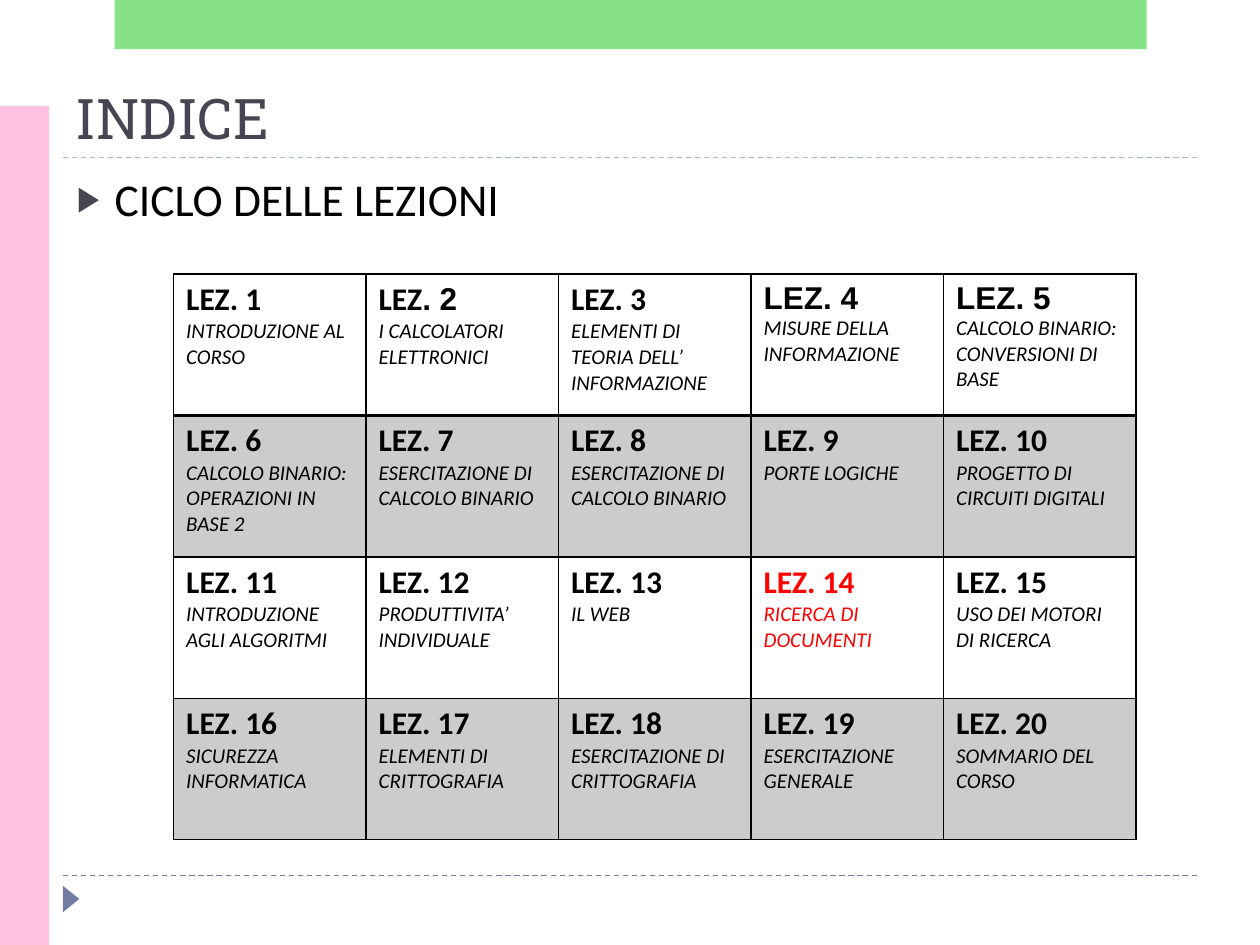
from dataclasses import dataclass
from itertools import product

from lxml.etree import SubElement
from pptx import Presentation
from pptx.dml.color import RGBColor
from pptx.enum.dml import MSO_LINE as Dash
from pptx.enum.shapes import MSO_CONNECTOR as Link, MSO_SHAPE as Shape
from pptx.enum.text import MSO_ANCHOR as Anchor, MSO_AUTO_SIZE as Fit, PP_ALIGN as Align
from pptx.oxml.ns import qn
from pptx.util import Pt

BLACK, RED, SLATE = "000000", "FF0000", "464653"
COLS, ROWS = 5, 4
HEAD = {"size": Pt(18), "bold": True, "italic": False, "name": "Calibri"}
TOPIC = {"size": Pt(12), "bold": False, "italic": True, "name": "Calibri"}


@dataclass
class Block:
    kind: Shape
    left: float
    top: float
    width: float
    height: float
    color: str
    alpha: int = 100
    turn: int = 0


@dataclass
class Rule:
    top: float
    color: str


@dataclass
class Lesson:
    topic: str
    arial: int = 0  # closing characters of the heading set in Arial
    color: str = BLACK


BLOCKS = [
    Block(Shape.ISOSCELES_TRIANGLE, 33.1, 509, 15.1, 9.4, "727CA3", turn=90),
    Block(Shape.RECTANGLE, 0, 60.5, 28.1, 479.5, "FFC1E0"),
    Block(Shape.RECTANGLE, 65.5, 0, 589.7, 28.1, "62D862", alpha=76),
]
RULES = [Rule(500.4, "727CA3"), Rule(90, "9FB8CD")]
LESSONS = [
    Lesson("INTRODUZIONE AL CORSO"),
    Lesson("I CALCOLATORI \vELETTRONICI", arial=3),
    Lesson("ELEMENTI DI TEORIA DELL’\vINFORMAZIONE"),
    Lesson("MISURE DELLA INFORMAZIONE", arial=6),
    Lesson("CALCOLO BINARIO: CONVERSIONI DI BASE", arial=6),
    Lesson("CALCOLO BINARIO: OPERAZIONI IN BASE 2"),
    Lesson("ESERCITAZIONE DI CALCOLO BINARIO"),
    Lesson("ESERCITAZIONE DI CALCOLO BINARIO"),
    Lesson("PORTE LOGICHE"),
    Lesson("PROGETTO DI CIRCUITI DIGITALI"),
    Lesson("INTRODUZIONE AGLI ALGORITMI"),
    Lesson("PRODUTTIVITA’ INDIVIDUALE"),
    Lesson("IL WEB"),
    Lesson("RICERCA DI DOCUMENTI", color=RED),
    Lesson("USO DEI MOTORI DI RICERCA"),
    Lesson("SICUREZZA INFORMATICA"),
    Lesson("ELEMENTI DI CRITTOGRAFIA"),
    Lesson("ESERCITAZIONE DI CRITTOGRAFIA"),
    Lesson("ESERCITAZIONE GENERALE"),
    Lesson("SOMMARIO DEL CORSO"),
]


def paint(target, color: str) -> None:
    target.rgb = RGBColor.from_string(color)


def fill(part, color: str, alpha: int = 100) -> None:
    part.fill.solid()
    paint(part.fill.fore_color, color)
    if alpha < 100:
        for tone in part._element.iter(qn("a:srgbClr")):
            SubElement(tone, qn("a:alpha"), val=str(alpha * 1000))


def style(run, form: dict, color: str) -> None:
    for key, value in form.items():
        setattr(run.font, key, value)
    paint(run.font.color, color)


def draw_block(slide, block: Block) -> None:
    box = (Pt(n) for n in (block.left, block.top, block.width, block.height))
    shape = slide.shapes.add_shape(block.kind, *box)
    shape.shadow.inherit = False
    shape.rotation = block.turn
    shape.line.fill.background()
    fill(shape, block.color, block.alpha)


def draw_rule(slide, rule: Rule) -> None:
    line = slide.shapes.add_connector(
        Link.STRAIGHT, Pt(36), Pt(rule.top), Pt(684), Pt(rule.top))
    line.line.width = Pt(0.75)
    line.line.dash_style = Dash.DASH
    paint(line.line.color, rule.color)
    SubElement(line._element.spPr, qn("a:effectLst"))


def set_text(holder, box: tuple, text: str, anchor: Anchor, form: dict, color: str):
    for key, value in zip(("left", "top", "width", "height"), box):
        setattr(holder, key, Pt(value))
    frame = holder.text_frame
    frame.auto_size = Fit.NONE
    frame.vertical_anchor = anchor
    para = frame.paragraphs[0]
    para.text = text
    para.alignment = Align.LEFT
    para.space_before = Pt(0)
    style(para.runs[0], form, color)
    return para


def add_bullet(para) -> None:
    props = para._p.get_or_add_pPr()
    props.set("marL", str(Pt(21.6)))
    props.set("indent", str(-Pt(21.6)))
    tone = SubElement(props, qn("a:buClr"))
    SubElement(tone, qn("a:srgbClr"), val=SLATE)
    SubElement(props, qn("a:buSzPct"), val="76000")
    SubElement(props, qn("a:buChar"), char="▶")


def add_edges(cell, row: int) -> None:
    props = cell._tc.get_or_add_tcPr()
    for side in "LRTB":
        thick = (row, side) in ((0, "B"), (1, "T"))
        edge = SubElement(props, qn(f"a:ln{side}"), w=str(Pt(2 if thick else 1)))
        ink = SubElement(edge, qn("a:solidFill"))
        SubElement(ink, qn("a:srgbClr"), val=BLACK)


def fill_cell(cell, row: int, num: int, lesson: Lesson) -> None:
    add_edges(cell, row)
    if row % 2:
        cell.fill.solid()
        paint(cell.fill.fore_color, BLACK)
        tone = cell._tc.tcPr.find(qn("a:solidFill"))[0]
        SubElement(tone, qn("a:alpha"), val="20000")
    else:
        cell.fill.background()
    # Heading, its tail sometimes in Arial
    para = cell.text_frame.paragraphs[0]
    head = f"LEZ. {num}"
    cut = len(head) - lesson.arial
    for text, face in ((head[:cut], "Calibri"), (head[cut:], "Arial")):
        if text:
            run = para.add_run()
            run.text = text
            style(run, HEAD | {"name": face}, lesson.color)
    # Topic
    para = cell.text_frame.add_paragraph()
    para.text = lesson.topic
    for run in para.runs:
        style(run, TOPIC, lesson.color)


def draw_table(slide) -> None:
    table = slide.shapes.add_table(
        ROWS, COLS, Pt(99.2), Pt(156.7), Pt(550), Pt(323.2)).table
    table.first_row = table.horz_banding = False
    for num, (row, col) in enumerate(product(range(ROWS), range(COLS)), 1):
        fill_cell(table.cell(row, col), row, num, LESSONS[num - 1])


def main() -> None:
    deck = Presentation()
    deck.slide_width, deck.slide_height = Pt(720), Pt(540)
    slide = deck.slides.add_slide(deck.slide_layouts[1])
    fill_back = slide.background.fill
    fill_back.solid()
    paint(fill_back.fore_color, "FFFFFF")

    # Frame of the page
    for rule in RULES:
        draw_rule(slide, rule)
    for block in BLOCKS:
        draw_block(slide, block)

    # Title and list
    title, body = slide.placeholders
    set_text(title, (36, 39.6, 648, 50.4), "INDICE", Anchor.BOTTOM,
             {"size": Pt(32), "name": "Roboto Slab"}, SLATE)
    item = set_text(body, (36.7, 94.3, 648, 56.9), "CICLO DELLE LEZIONI", Anchor.TOP,
                    {"size": Pt(26), "name": "Calibri"}, BLACK)
    add_bullet(item)

    # Lessons
    draw_table(slide)
    deck.save("out.pptx")


if __name__ == "__main__":
    main()
